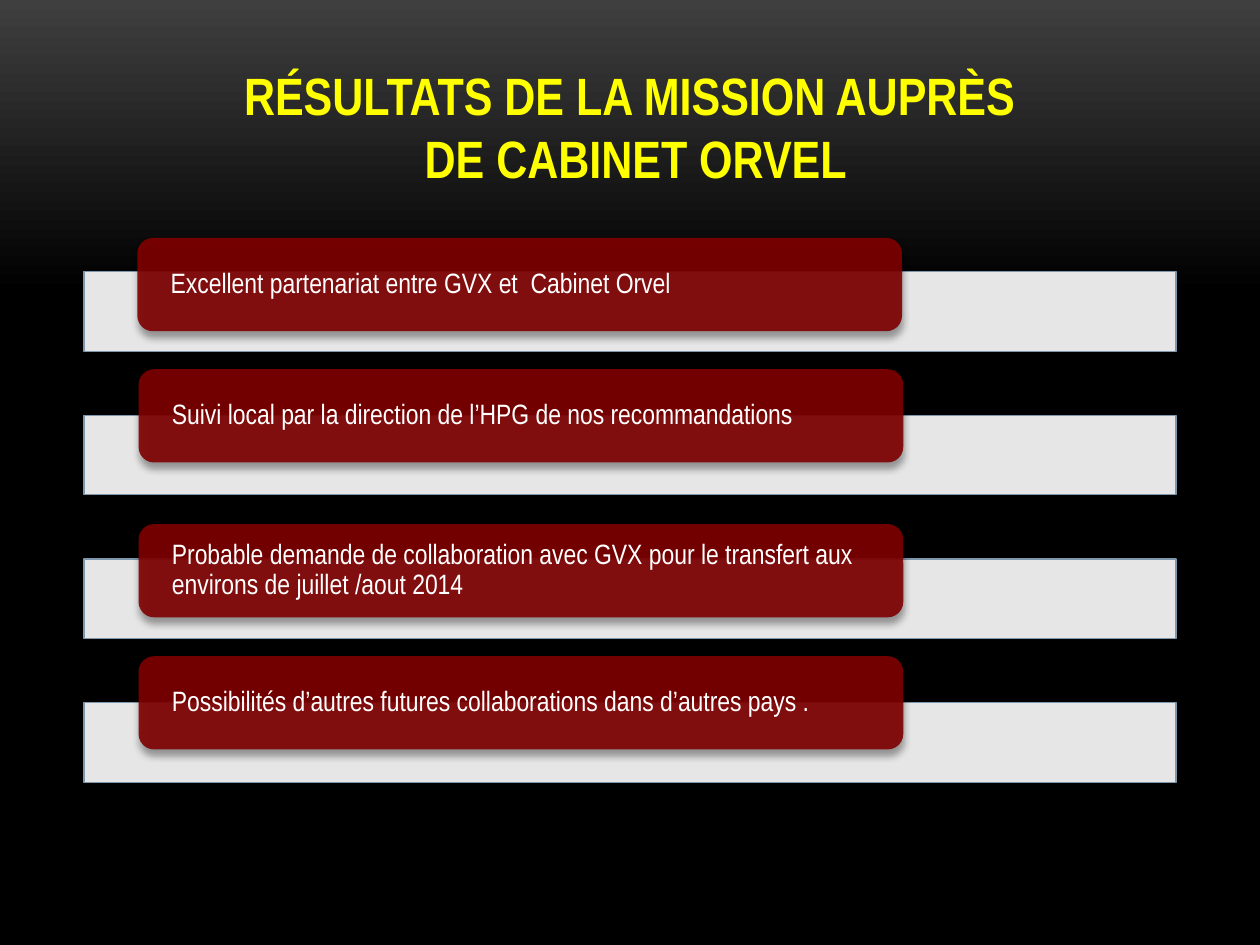
from copy import deepcopy

from lxml.etree import SubElement
from pptx import Presentation
from pptx.dml.color import RGBColor
from pptx.enum.shapes import MSO_SHAPE as Shape
from pptx.enum.text import MSO_ANCHOR as Anchor, PP_ALIGN as Align
from pptx.oxml import parse_xml
from pptx.oxml.ns import nsdecls, qn
from pptx.util import Pt

# Content
TITLE = "RÉSULTATS DE LA MISSION AUPRÈS\v DE CABINET ORVEL"
# Label text, left and top of its box
RESULTS = [
    ("Excellent partenariat entre GVX et  Cabinet Orvel", 78.5, 136),
    ("Suivi local par la direction de l’HPG de nos recommandations", 79.2, 211),
    ("Probable demande de collaboration avec GVX pour le transfert aux "
     "environs de juillet /aout 2014", 79.2, 299.5),
    ("Possibilités d’autres futures collaborations dans d’autres pays .", 79.2, 375),
]

# Layout and style
FONT = "Arial Narrow"
MARGIN, CONTENT_WIDTH = 48, 624
BAR_TOP, BAR_PITCH, BAR_HEIGHT = 155.3, 82.1, 45.4
LABEL_WIDTH, LABEL_HEIGHT, LABEL_INSET = 437, 53.3, 16.5
BACKGROUND_STOPS = [(0, "3F3F3F"), (0.31, "000000"), (1, "000000")]
SHADOW = (
    f'<a:effectLst {nsdecls("a")}><a:outerShdw blurRad="50800" dist="43180" '
    'dir="5400000" rotWithShape="0"><a:srgbClr val="000000">'
    '<a:alpha val="40000"/></a:srgbClr></a:outerShdw></a:effectLst>'
)


def color(value):
    return RGBColor.from_string(value)


def paint_background(slide):
    fill = slide.background.fill
    fill.gradient()
    fill.gradient_angle = 270
    last = fill.gradient_stops[1]._gs
    last.addnext(deepcopy(last))
    for stop, (position, value) in zip(fill.gradient_stops, BACKGROUND_STOPS):
        stop.position = position
        stop.color.rgb = color(value)


def add_panel(slide, kind, left, top, width, height, fill):
    shape = slide.shapes.add_shape(kind, Pt(left), Pt(top), Pt(width), Pt(height))
    shape.shadow.inherit = False
    shape.fill.solid()
    shape.fill.fore_color.rgb = color(fill)
    rgb = shape._element.spPr.find(f"{qn('a:solidFill')}/{qn('a:srgbClr')}")
    SubElement(rgb, qn("a:alpha"), val="90000")
    return shape


def set_text(shape, text, size, value, anchor, align, bold=False):
    frame = shape.text_frame
    frame.word_wrap = True
    frame.vertical_anchor = anchor
    frame.text = text
    paragraph = frame.paragraphs[0]
    paragraph.alignment = align
    for run in paragraph.runs:
        run.font.name = FONT
        run.font.size = Pt(size)
        run.font.bold = bold
        run.font.color.rgb = color(value)
    return frame


def add_label(slide, text, left, top):
    label = add_panel(slide, Shape.ROUNDED_RECTANGLE, left, top,
                      LABEL_WIDTH, LABEL_HEIGHT, "800000")
    label.line.fill.background()
    effects = label._element.spPr.find(qn("a:effectLst"))
    effects.getparent().replace(effects, parse_xml(SHADOW))
    frame = set_text(label, text, 16, "FFFFFF", Anchor.MIDDLE, Align.LEFT)
    frame.margin_left = frame.margin_right = Pt(LABEL_INSET)
    frame.margin_top = frame.margin_bottom = 0
    frame.paragraphs[0].line_spacing = 0.9


def main():
    presentation = Presentation()
    presentation.slide_width, presentation.slide_height = Pt(720), Pt(540)
    slide = presentation.slides.add_slide(presentation.slide_layouts[6])
    paint_background(slide)

    # Title
    title = slide.shapes.add_textbox(Pt(MARGIN), Pt(21.6), Pt(CONTENT_WIDTH), Pt(90))
    set_text(title, TITLE, 30, "FFFF00", Anchor.BOTTOM, Align.CENTER, bold=True)

    # Bars, each with its label on top
    for index, (text, left, top) in enumerate(RESULTS):
        bar = add_panel(slide, Shape.RECTANGLE, MARGIN, BAR_TOP + index * BAR_PITCH,
                        CONTENT_WIDTH, BAR_HEIGHT, "FFFFFF")
        bar.line.color.rgb = color("7E97AD")
        bar.line.width = Pt(0.75)
        add_label(slide, text, left, top)

    presentation.save("out.pptx")


if __name__ == "__main__":
    main()
